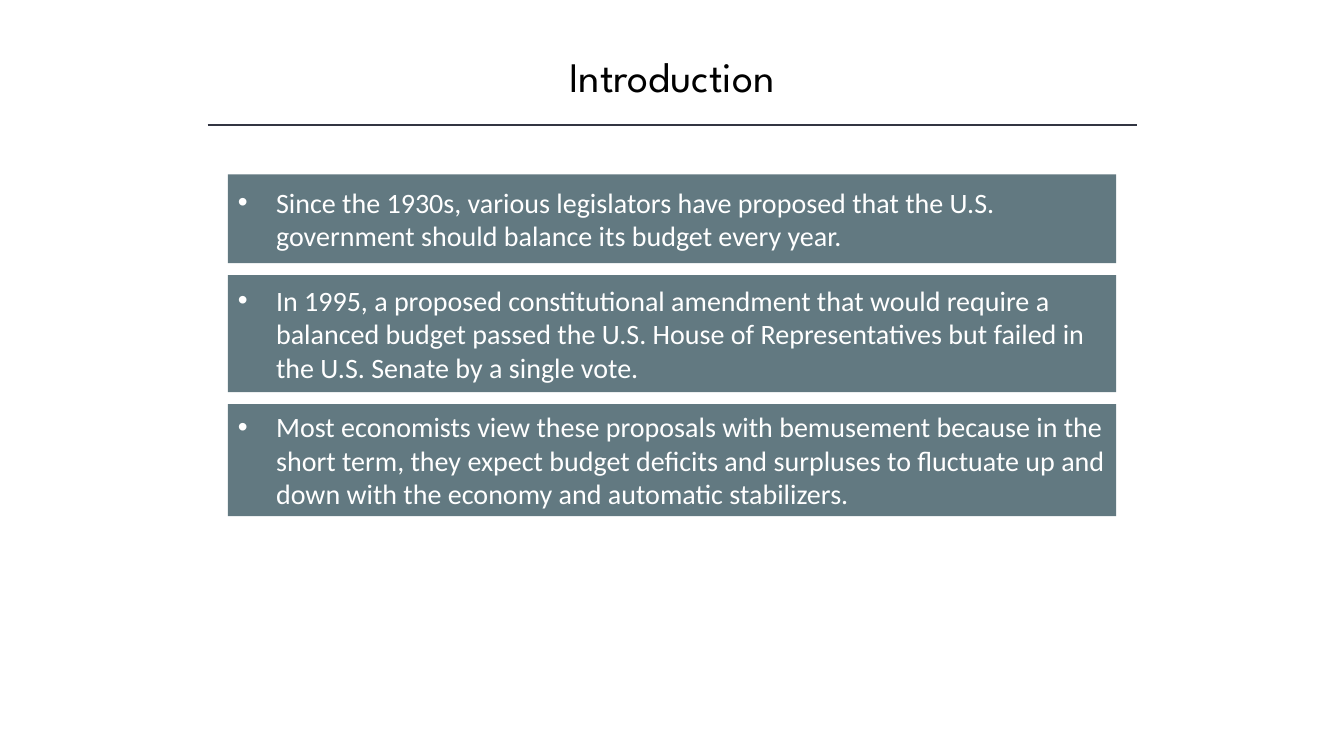
from lxml.etree import SubElement
from pptx import Presentation
from pptx.dml.color import RGBColor
from pptx.enum.shapes import MSO_CONNECTOR as Connector, MSO_SHAPE as Shape
from pptx.enum.text import MSO_ANCHOR as Anchor, MSO_AUTO_SIZE as AutoSize, PP_ALIGN as Align
from pptx.oxml.ns import qn
from pptx.util import Inches, Pt


def color(value):
    return RGBColor.from_string(value)


class IntroductionSlide:
    """Holds the style and the current page, and adds its elements."""

    TITLE = {"name": "League Spartan", "size": Pt(30), "bold": False}
    BODY = {"name": "Calibri", "size": Pt(20), "bold": False}
    INK, RULE, PANEL, WHITE = "000000", "323542", "627981", "FFFFFF"

    def __init__(self, deck):
        self.page = deck.slides.add_slide(deck.slide_layouts[5])
        self.page.background.fill.solid()
        self.page.background.fill.fore_color.rgb = color(self.WHITE)

    def set_text(self, shape, text, style, ink, align):
        frame = shape.text_frame
        settings = {"word_wrap": True, "auto_size": AutoSize.NONE,
                    "vertical_anchor": Anchor.MIDDLE,
                    "margin_left": Inches(0.1), "margin_right": Inches(0.1),
                    "margin_top": Inches(0.05), "margin_bottom": Inches(0.05)}
        for name, value in settings.items():
            setattr(frame, name, value)
        para = frame.paragraphs[0]
        para.alignment = align
        span = para.add_run()
        span.text = text
        for name, value in style.items():
            setattr(span.font, name, value)
        span.font.color.rgb = color(ink)
        return para

    def title(self, text, left, top, width, height):
        shape = self.page.shapes.title
        place = {"left": left, "top": top, "width": width, "height": height}
        for name, value in place.items():
            setattr(shape, name, Inches(value))
        self.set_text(shape, text, self.TITLE, self.INK, Align.CENTER)

    def rule(self, left, right, top):
        line = self.page.shapes.add_connector(
            Connector.STRAIGHT, Inches(left), Inches(top), Inches(right), Inches(top))
        line.line.color.rgb = color(self.RULE)
        line.line.width = Pt(1)
        SubElement(line._element.spPr, qn("a:effectLst"))

    def bullet_panel(self, text, left, top, width, height):
        panel = self.page.shapes.add_shape(
            Shape.RECTANGLE, Inches(left), Inches(top), Inches(width), Inches(height))
        panel.shadow.inherit = False
        panel.fill.solid()
        panel.fill.fore_color.rgb = color(self.PANEL)
        panel.line.fill.background()
        para = self.set_text(panel, text, self.BODY, self.WHITE, Align.LEFT)
        properties = para._p.get_or_add_pPr()
        properties.set("marL", str(Inches(0.38)))
        properties.set("indent", str(Inches(-0.38)))
        SubElement(properties, qn("a:buFont"), typeface="Arial")
        SubElement(properties, qn("a:buChar"), char="•")


def main():
    deck = Presentation()
    deck.slide_width, deck.slide_height = Inches(13.33), Inches(7.5)
    slide = IntroductionSlide(deck)
    slide.title("Introduction", 1.86, 0.45, 9.61, 0.61)
    slide.rule(2.06, 11.28, 1.24)
    points = [
        ("Since the 1930s, various legislators have proposed that the U.S. "
         "government should balance its budget every year.", 0.88),
        ("In 1995, a proposed constitutional amendment that would require a "
         "balanced budget passed the U.S. House of Representatives but failed in "
         "the U.S. Senate by a single vote.", 1.16),
        ("Most economists view these proposals with bemusement because in the "
         "short term, they expect budget deficits and surpluses to fluctuate up and "
         "down with the economy and automatic stabilizers.", 1.11),
    ]
    top, gap = 1.73, 0.12
    for text, height in points:
        slide.bullet_panel(text, 2.26, top, 8.81, height)
        top += height + gap
    deck.save("out.pptx")


if __name__ == "__main__":
    main()
